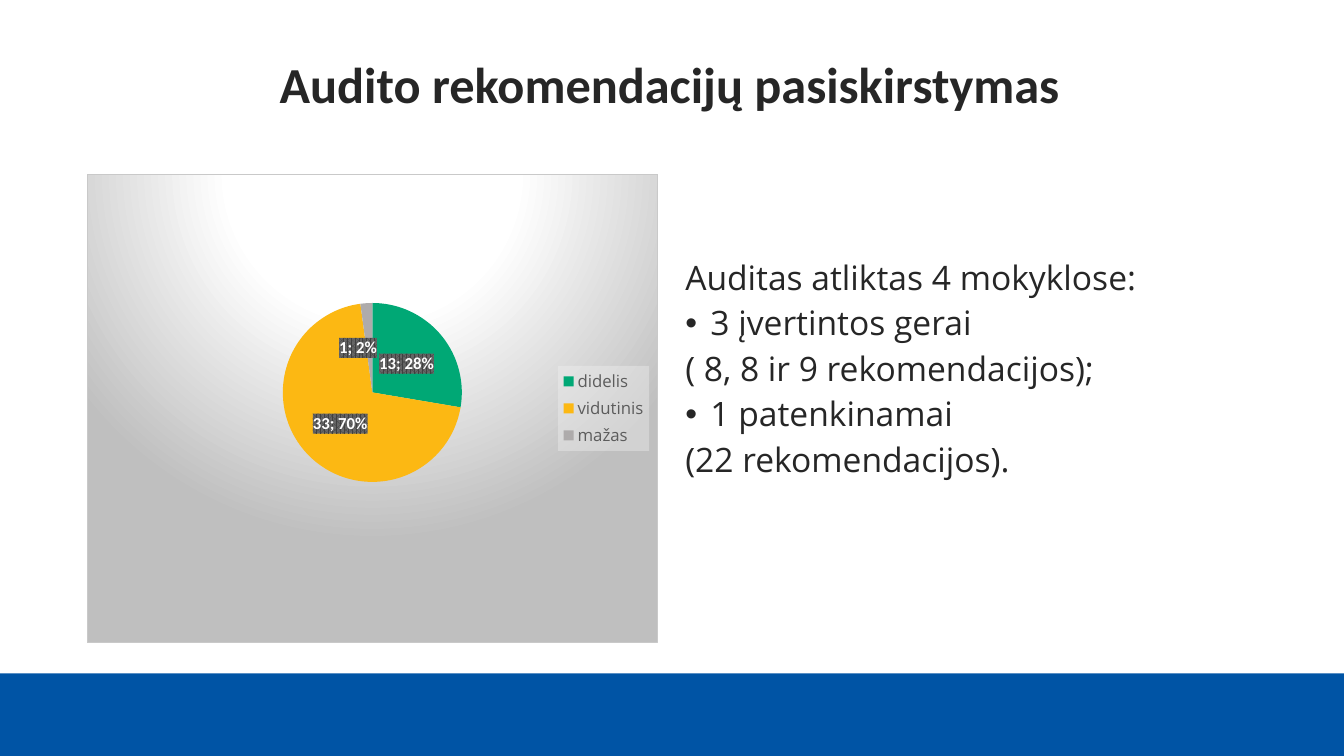
from copy import deepcopy

from pptx import Presentation
from pptx.chart.data import CategoryChartData
from pptx.dml.color import RGBColor
from pptx.enum.chart import XL_CHART_TYPE, XL_LABEL_POSITION, XL_LEGEND_POSITION
from pptx.enum.shapes import MSO_SHAPE
from pptx.enum.text import MSO_ANCHOR, PP_ALIGN
from pptx.oxml import parse_xml
from pptx.oxml.ns import nsdecls, qn
from pptx.util import Pt

BACKDROP = (
    '<a:gradFill><a:gsLst>'
    '<a:gs pos="0"><a:srgbClr val="FFFFFF"/></a:gs>'
    '<a:gs pos="39000"><a:srgbClr val="FFFFFF"/></a:gs>'
    '<a:gs pos="100000"><a:srgbClr val="BFBFBF"/></a:gs>'
    '</a:gsLst><a:path path="circle">'
    '<a:fillToRect l="50000" t="-80000" r="50000" b="180000"/></a:path></a:gradFill>'
    '<a:ln w="9525"><a:solidFill><a:srgbClr val="C9C9C9"/></a:solidFill></a:ln>'
)
LEGEND_PANEL = (
    '<a:solidFill><a:srgbClr val="F2F2F2"><a:alpha val="39000"/></a:srgbClr></a:solidFill>'
    '<a:ln><a:noFill/></a:ln>'
)
LABEL_PANEL = (
    '<a:pattFill prst="pct75"><a:fgClr><a:srgbClr val="404040"/></a:fgClr>'
    '<a:bgClr><a:srgbClr val="666666"/></a:bgClr></a:pattFill><a:ln><a:noFill/></a:ln>'
)


def color(value):
    return RGBColor.from_string(value)


def chart_xml(tag, content):
    return parse_xml(f'<c:{tag} {nsdecls("c", "a")}>{content}</c:{tag}>')


def paint(holder, content):
    holder.find(qn("c:txPr")).addprevious(chart_xml("spPr", content))


class SlideBuilder:
    heading_font = "Calibri"
    body_font = "Open Sans"
    ink = "262626"

    def __init__(self, page):
        self.page = page

    def style(self, font, name, size, tint, bold=False):
        font.name = name
        font.size = Pt(size)
        font.bold = bold
        font.color.rgb = color(tint)

    def band(self, left, top, width, height, tint):
        shape = self.page.shapes.add_shape(
            MSO_SHAPE.RECTANGLE, Pt(left), Pt(top), Pt(width), Pt(height))
        shape.shadow.inherit = False
        shape.fill.solid()
        shape.fill.fore_color.rgb = color(tint)
        shape.line.fill.background()

    def text_frame(self, left, top, width, height, lines):
        box = self.page.shapes.add_textbox(Pt(left), Pt(top), Pt(width), Pt(height))
        frame = box.text_frame
        frame.word_wrap = True
        frame.text = "\n".join(lines)
        return frame

    def title(self, left, top, width, height, text):
        frame = self.text_frame(left, top, width, height, [text])
        frame.vertical_anchor = MSO_ANCHOR.BOTTOM
        para = frame.paragraphs[0]
        para.alignment = PP_ALIGN.CENTER
        para.line_spacing = 0.9
        self.style(para.runs[0].font, self.heading_font, 36, self.ink, True)

    def body(self, left, top, width, height, items):
        frame = self.text_frame(left, top, width, height, [text for text, _ in items])
        for index, (para, (_, bulleted)) in enumerate(zip(frame.paragraphs, items)):
            para.line_spacing = 0.85
            if index:
                para.space_before = Pt(8)
            if bulleted:
                self.bullet(para)
            self.style(para.runs[0].font, self.body_font, 24, self.ink)

    def bullet(self, para):
        properties = para._p.get_or_add_pPr()
        properties.set("marL", str(Pt(18)))
        properties.set("indent", str(-Pt(18)))
        properties.append(parse_xml(f'<a:buFont {nsdecls("a")} typeface="Arial"/>'))
        properties.append(parse_xml(f'<a:buChar {nsdecls("a")} char="•"/>'))

    def pie(self, left, top, width, height, slices):
        data = CategoryChartData()
        data.categories = [name for name, _, _ in slices]
        data.add_series("Series 1", [value for _, value, _ in slices])
        chart = self.page.shapes.add_chart(
            XL_CHART_TYPE.PIE, Pt(left), Pt(top), Pt(width), Pt(height), data).chart
        chart.has_title = False
        self.style(chart.font, self.body_font, 10, self.ink)
        paint(chart.element, BACKDROP)

        chart.has_legend = True
        legend = chart.legend
        legend.position = XL_LEGEND_POSITION.RIGHT
        legend.include_in_layout = False
        self.style(legend.font, self.body_font, 12, "5C5C5C")
        paint(chart.element.find(".//" + qn("c:legend")), LEGEND_PANEL)

        plot = chart.plots[0]
        plot.vary_by_categories = True
        series = plot.series[0]
        for index, (_, _, tint) in enumerate(slices):
            fill = series.points[index].format.fill
            fill.solid()
            fill.fore_color.rgb = color(tint)
        self.plot_layout(chart, 0.343, 0.086, 0.314, 0.76)
        self.slice_labels(series.data_labels)

    def plot_layout(self, chart, left, top, width, height):
        area = chart.element.find(".//" + qn("c:plotArea"))
        for layout in area.findall(qn("c:layout")):
            area.remove(layout)
        area.insert(0, chart_xml("layout", (
            '<c:manualLayout><c:layoutTarget val="inner"/>'
            '<c:xMode val="edge"/><c:yMode val="edge"/>'
            f'<c:x val="{left}"/><c:y val="{top}"/>'
            f'<c:w val="{width}"/><c:h val="{height}"/></c:manualLayout>')))

    def slice_labels(self, labels):
        labels.show_value = True
        labels.show_percentage = True
        labels.position = XL_LABEL_POSITION.CENTER
        self.style(labels.font, self.heading_font, 12, "FFFFFF", True)
        group = labels._element
        paint(group, LABEL_PANEL)
        group.find(qn("c:showBubbleSize")).addnext(chart_xml("separator", "; "))
        shifted = chart_xml("dLbl", (
            '<c:idx val="2"/><c:layout><c:manualLayout>'
            '<c:x val="-0.02"/><c:y val="0"/></c:manualLayout></c:layout>'))
        for child in group:
            if child.tag != qn("c:showLeaderLines"):
                shifted.append(deepcopy(child))
        group.insert(0, shifted)


def main():
    deck = Presentation()
    deck.slide_width = Pt(960)
    deck.slide_height = Pt(540)
    builder = SlideBuilder(deck.slides.add_slide(deck.slide_layouts[6]))
    builder.band(0, 481, 960, 59, "0054A5")
    builder.title(43, 21.6, 871, 64, "Audito rekomendacijų pasiskirstymas")
    builder.pie(62, 124, 408, 335.5, [
        ("didelis", 13, "00A875"),
        ("vidutinis", 33, "FCB813"),
        ("mažas", 1, "AEABAB"),
    ])
    builder.body(482.4, 184.3, 408, 196, [
        ("Auditas atliktas 4 mokyklose:", False),
        ("3 įvertintos gerai", True),
        ("( 8, 8 ir 9 rekomendacijos);", False),
        ("1 patenkinamai", True),
        ("(22 rekomendacijos).", False),
    ])
    deck.save("out.pptx")


if __name__ == "__main__":
    main()
